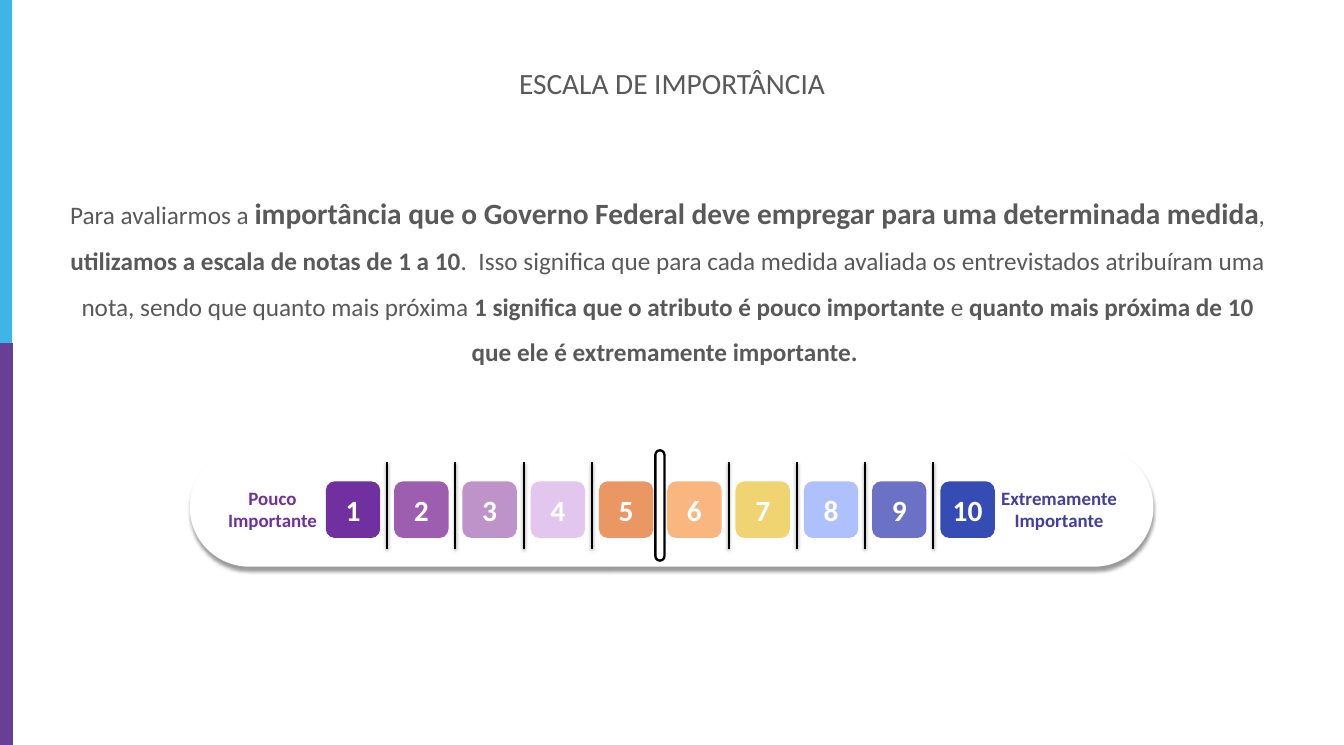
"""Build the importance scale slide, with notes from 1 to 10."""
from dataclasses import dataclass

from lxml import etree
from pptx import Presentation
from pptx import util as u
from pptx.dml.color import RGBColor
from pptx.enum import shapes, text
from pptx.oxml.ns import qn


@dataclass(frozen=True)
class Theme:
    font: str = "Calibri"
    grey: str = "595959"
    white: str = "FFFFFF"
    black: str = "000000"
    sky: str = "3EB5E5"
    violet: str = "673F96"
    low: str = "7030A0"
    high: str = "433EA2"
    large: int = 28
    body: int = 24
    label: int = 18


THEME = Theme()
WIDTH, HEIGHT = 17.78, 9.86

TITLE = "ESCALA DE IMPORTÂNCIA"
EXPLANATION = [
    ("Para avaliarmos a ", THEME.body, False),
    ("importância que o Governo Federal deve empregar para uma determinada medida", THEME.large, True),
    (", ", THEME.body, False),
    ("utilizamos a escala de notas de 1 a 10", THEME.body, True),
    (".  Isso significa que para cada medida avaliada os entrevistados atribuíram uma nota, "
     "sendo que quanto mais próxima ", THEME.body, False),
    ("1 significa que o atributo é pouco importante ", THEME.body, True),
    ("e ", THEME.body, False),
    ("quanto mais próxima de 10 que ele é extremamente importante. ", THEME.body, True),
]
NOTE_COLORS = ["7030A0", "9D5EAF", "BD93C9", "E2C6EE", "EB9763",
               "F9B67F", "EFD471", "AEC0FE", "6B71C5", "354CB4"]
END_LABELS = [
    ("Pouco Importante", THEME.low, 2.99, 1.23),
    ("Extremamente Importante", THEME.high, 13.16, 1.7),
]
SIDE_BARS = [(THEME.sky, 0, 0.16), (THEME.violet, 4.54, 0.17)]

FIRST_TILE, LAST_TILE, TILE_TOP = 4.31, 12.44, 6.37
TILE_WIDTH, TILE_HEIGHT = 0.72, 0.75
PITCH = (LAST_TILE - FIRST_TILE) / (len(NOTE_COLORS) - 1)
TICK_TOP, TICK_BOTTOM = 6.12, 7.26
MIDDLE_NOTE = len(NOTE_COLORS) // 2


def inches(*lengths):
    return [u.Inches(length) for length in lengths]


def add_shadow(item, opacity, blur, distance):
    props = item._element.spPr
    effects = props.find(qn("a:effectLst"))
    if effects is None:
        effects = etree.SubElement(props, qn("a:effectLst"))
    shadow = etree.SubElement(effects, qn("a:outerShdw"), blurRad=str(u.Pt(blur)),
                              dist=str(u.Pt(distance)), dir="5400000", rotWithShape="0")
    color = etree.SubElement(shadow, qn("a:srgbClr"), val=THEME.black)
    etree.SubElement(color, qn("a:alpha"), val=str(opacity * 1000))


def add_block(page, kind, place, fill, outline=None, rounding=None):
    block = page.shapes.add_shape(kind, *inches(*place))
    block.fill.solid()
    block.fill.fore_color.rgb = RGBColor.from_string(fill)
    if outline:
        block.line.color.rgb = RGBColor.from_string(outline)
        block.line.width = u.Pt(2.25)
    else:
        block.line.fill.background()
    block.shadow.inherit = False
    if rounding is not None:
        block.adjustments[0] = rounding
    return block


def write(box, spans, color, spacing=None, anchor=text.MSO_ANCHOR.MIDDLE, margins=(0.1, 0.05)):
    frame = box.text_frame
    frame.word_wrap = True
    frame.vertical_anchor = anchor
    frame.margin_left = frame.margin_right = u.Inches(margins[0])
    frame.margin_top = frame.margin_bottom = u.Inches(margins[1])
    para = frame.paragraphs[0]
    para.alignment = text.PP_ALIGN.CENTER
    if spacing:
        para.line_spacing = spacing
    for words, size, bold in spans:
        span = para.add_run()
        span.text = words
        span.font.name = THEME.font
        span.font.size = u.Pt(size)
        span.font.bold = bold
        span.font.color.rgb = RGBColor.from_string(color)


def add_text(page, place, *args, **options):
    write(page.shapes.add_textbox(*inches(*place)), *args, **options)


def add_tick(page, x):
    tick = page.shapes.add_connector(shapes.MSO_CONNECTOR.STRAIGHT,
                                     *inches(x, TICK_BOTTOM, x, TICK_TOP))
    tick.line.color.rgb = RGBColor.from_string(THEME.black)
    tick.line.width = u.Pt(2)
    add_shadow(tick, 38, 3.1, 1.6)


def add_scale(page):
    rounded = shapes.MSO_SHAPE.ROUNDED_RECTANGLE
    panel = add_block(page, rounded, (2.51, 5.92, 12.75, 1.58), THEME.white, rounding=0.5)
    add_shadow(panel, 40, 4, 3)
    for index, color in enumerate(NOTE_COLORS):
        place = (FIRST_TILE + index * PITCH, TILE_TOP, TILE_WIDTH, TILE_HEIGHT)
        tile = add_block(page, rounded, place, color)
        write(tile, [(str(index + 1), THEME.large, True)], THEME.white)
    for words, color, left, width in END_LABELS:
        add_text(page, (left, 6.43, width, 0.61), [(words, THEME.label, True)], color, margins=(0, 0))
    add_block(page, rounded, (8.67, 5.96, 0.12, 1.46), THEME.white, THEME.black, 0.5)
    half_gap = (PITCH - TILE_WIDTH) / 2
    for note in range(1, len(NOTE_COLORS)):
        if note != MIDDLE_NOTE:
            add_tick(page, FIRST_TILE + note * PITCH - half_gap)


def main():
    deck = Presentation()
    deck.slide_width, deck.slide_height = inches(WIDTH, HEIGHT)
    page = deck.slides.add_slide(deck.slide_layouts[6])
    for color, top, width in SIDE_BARS:
        add_block(page, shapes.MSO_SHAPE.RECTANGLE, (0, top, width, HEIGHT - top), color)
    add_text(page, (0.89, 0.7, 16, 0.8), [(TITLE, THEME.large, False)], THEME.grey, margins=(0.18, 0.09))
    add_text(page, (0.72, 2.3, 16.22, 2.64), EXPLANATION, THEME.grey,
             spacing=1.5, anchor=text.MSO_ANCHOR.TOP)
    add_scale(page)
    deck.save("out.pptx")


if __name__ == "__main__":
    main()
